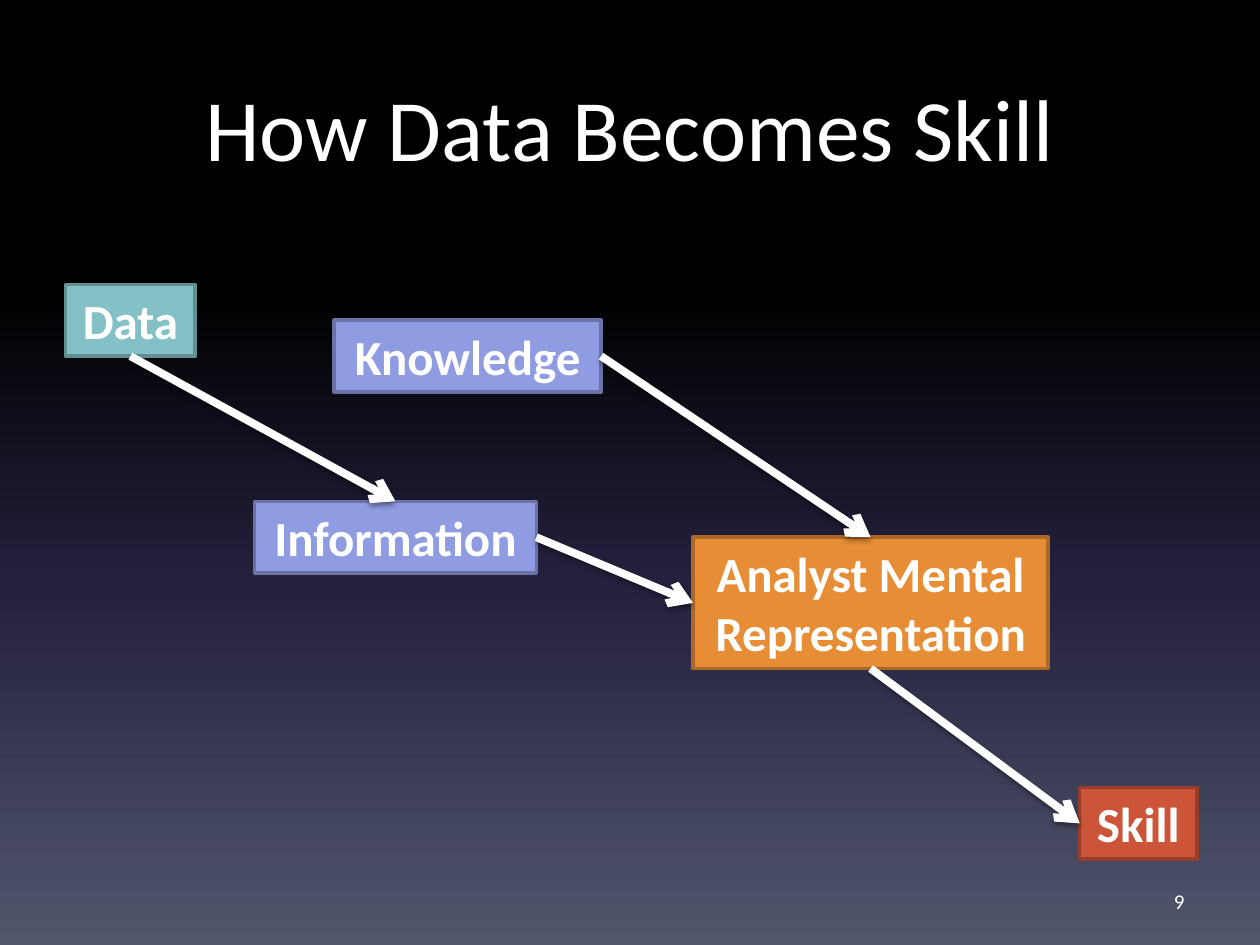
from lxml import etree
from pptx import Presentation
from pptx.dml.color import RGBColor
from pptx.enum import shapes, text
from pptx.oxml import ns, parse_xml
from pptx.util import Pt

WHITE = "FFFFFF"
BOTTOM, LEFT, TOP, RIGHT = 2, 1, 0, 3


def color(value):
    return RGBColor.from_string(value)


class SkillPage:
    """Style and drawing methods for the current slide."""

    font = "Calibri"

    def __init__(self, deck):
        self.page = deck.slides.add_slide(deck.slide_layouts[5])

    def background(self, stops):
        fill = self.page.background.fill
        fill.gradient()
        fill.gradient_angle = 270
        stop_list = self.page.element.find(".//" + ns.qn("a:gsLst"))
        for old in list(stop_list):
            stop_list.remove(old)
        for percent, value in stops:
            stop = etree.SubElement(stop_list, ns.qn("a:gs"), pos=str(percent * 1000))
            etree.SubElement(stop, ns.qn("a:srgbClr"), val=value)

    def set_words(self, frame, words, size, align, bold=False):
        frame.text = words
        para = frame.paragraphs[0]
        para.alignment = align
        font = para.font
        font.name, font.size, font.bold = self.font, Pt(size), bold
        font.color.rgb = color(WHITE)

    def title(self, words, left, top, width, height):
        box = self.page.shapes.title
        box.left, box.top, box.width, box.height = map(Pt, (left, top, width, height))
        frame = box.text_frame
        frame.auto_size = text.MSO_AUTO_SIZE.NONE
        frame.vertical_anchor = text.MSO_ANCHOR.TOP
        frame.margin_top = Pt(6)
        self.set_words(frame, words, 50, text.PP_ALIGN.CENTER)

    def box(self, words, left, top, width, height, fill, line):
        box = self.page.shapes.add_shape(
            shapes.MSO_SHAPE.RECTANGLE, Pt(left), Pt(top), Pt(width), Pt(height))
        box.shadow.inherit = False
        box.fill.solid()
        box.fill.fore_color.rgb = color(fill)
        box.line.color.rgb = color(line)
        box.line.width = Pt(2)
        frame = box.text_frame
        frame.word_wrap = False
        frame.auto_size = text.MSO_AUTO_SIZE.SHAPE_TO_FIT_TEXT
        self.set_words(frame, words, 28, text.PP_ALIGN.CENTER, bold=True)
        return box

    def arrow(self, start, start_side, end, end_side):
        arrow = self.page.shapes.add_connector(
            shapes.MSO_CONNECTOR.STRAIGHT, 0, 0, 0, 0)
        arrow.begin_connect(start, start_side)
        arrow.end_connect(end, end_side)
        arrow.line.color.rgb = color(WHITE)
        arrow.line.width = Pt(4.5)
        properties = arrow._element.spPr
        etree.SubElement(properties.find(ns.qn("a:ln")), ns.qn("a:tailEnd"), type="arrow")
        properties.append(parse_xml(
            f'<a:effectLst {ns.nsdecls("a")}>'
            f'<a:outerShdw blurRad="{Pt(3.1)}" dist="{Pt(1.6)}" dir="5400000" rotWithShape="0">'
            '<a:srgbClr val="000000"><a:alpha val="38000"/></a:srgbClr>'
            '</a:outerShdw></a:effectLst>'))

    def page_number(self, words, left, top, width, height):
        box = self.page.shapes.add_textbox(Pt(left), Pt(top), Pt(width), Pt(height))
        frame = box.text_frame
        frame.word_wrap = True
        frame.vertical_anchor = text.MSO_ANCHOR.MIDDLE
        self.set_words(frame, words, 12, text.PP_ALIGN.RIGHT)


def main():
    deck = Presentation()
    deck.slide_width, deck.slide_height = Pt(720), Pt(540)
    page = SkillPage(deck)
    page.background([(0, "000000"), (31, "000000"), (62, "24213E"), (100, "51566D")])
    page.title("How Data Becomes Skill", 36, 36, 648, 90)

    knowledge = page.box("Knowledge", 191, 183, 152.5, 41, "909CE1", "6B73A6")
    analyst = page.box("Analyst Mental\vRepresentation", 396, 307, 203, 75,
                       "E78D35", "AB6827")
    skill = page.box("Skill", 617, 450, 67, 41, "CC5439", "973E2A")
    data = page.box("Data", 37.5, 162.5, 74, 41, "83C1C6", "618F92")
    information = page.box("Information", 145.5, 286.5, 161, 41, "909CE1", "6B73A6")

    page.arrow(data, BOTTOM, information, TOP)
    page.arrow(information, RIGHT, analyst, LEFT)
    page.arrow(knowledge, RIGHT, analyst, TOP)
    page.arrow(analyst, BOTTOM, skill, LEFT)
    page.page_number("9", 516, 500.5, 168, 29)
    deck.save("out.pptx")


if __name__ == "__main__":
    main()
